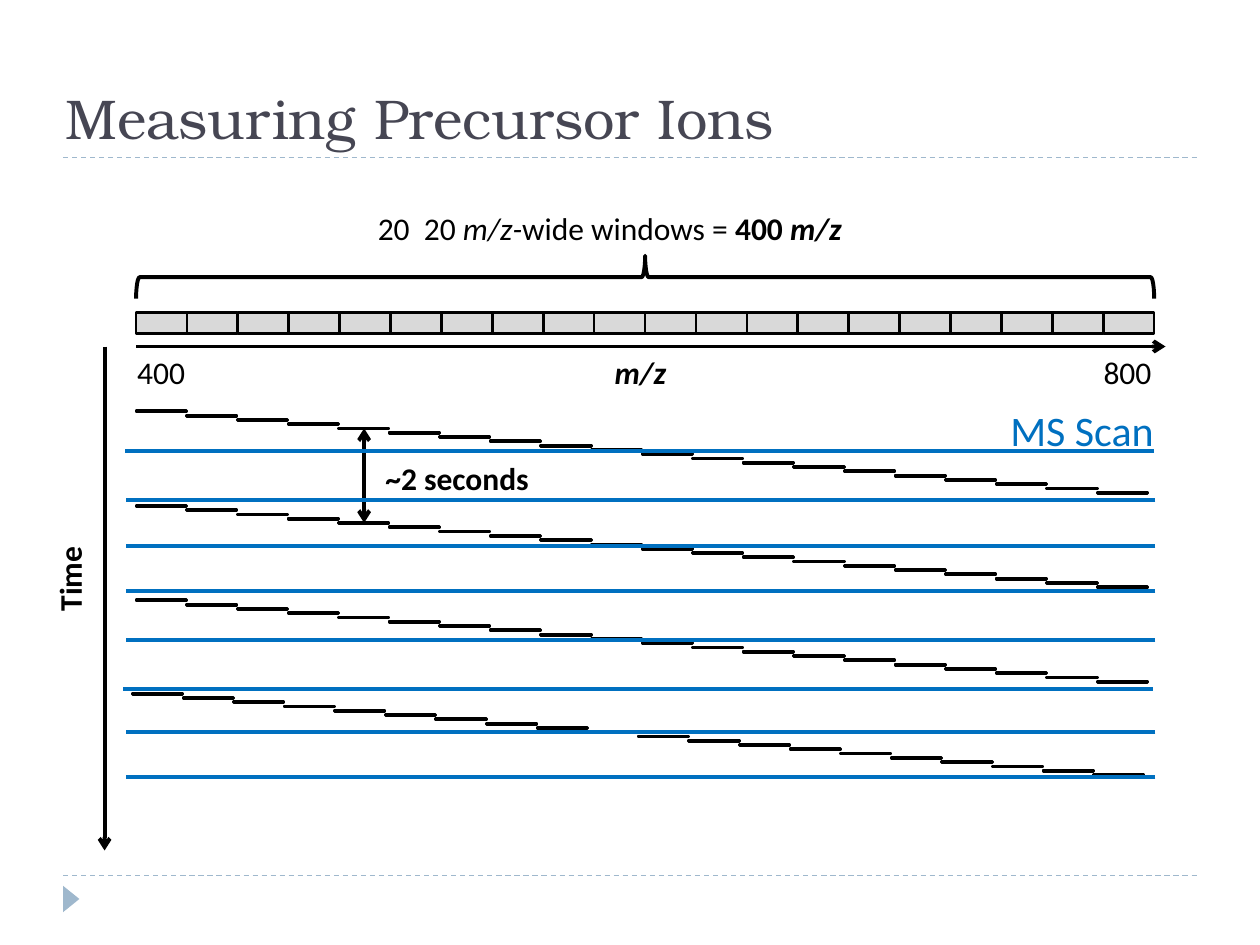
from lxml import etree
from pptx import Presentation
from pptx.dml.color import RGBColor
from pptx.enum.dml import MSO_LINE
from pptx.enum.shapes import MSO_CONNECTOR, MSO_SHAPE
from pptx.enum.text import MSO_ANCHOR, MSO_AUTO_SIZE, PP_ALIGN
from pptx.oxml.ns import qn
from pptx.util import Inches, Pt

RECTANGLE = MSO_SHAPE.RECTANGLE
BRACE = MSO_SHAPE.LEFT_BRACE
TRIANGLE = MSO_SHAPE.ISOSCELES_TRIANGLE
STRAIGHT = MSO_CONNECTOR.STRAIGHT
DASH = MSO_LINE.DASH
LEFT = PP_ALIGN.LEFT
BOTTOM, TOP = MSO_ANCHOR.BOTTOM, MSO_ANCHOR.TOP
GROW, FIXED = MSO_AUTO_SIZE.SHAPE_TO_FIT_TEXT, MSO_AUTO_SIZE.NONE

COLORS = {"ink": "000000", "paper": "FFFFFF", "title": "464653",
          "accent": "9FB8CD", "window": "D9D9D9", "scan": "0070C0"}
BODY_FONT, TITLE_FONT = "Calibri", "TeX Gyre Bonum"

WIDTH, HEIGHT = Inches(10), Inches(7.5)
COLUMN, ROW = WIDTH / 100, HEIGHT / 75  # every length below counts these
WINDOWS = 20
SWEEPS = [(10.8, 32.6), (10.8, 40.1), (10.8, 47.6), (10.5, 55)]
SCANS = [(9.9, 35.8), (10, 39.7), (10, 43.3), (10, 46.9),
         (10, 50.8), (9.8, 54.7), (10, 58.1), (10, 61.7)]
SCAN_WIDTH = 81.7


def color(name):
    return RGBColor.from_string(COLORS[name])


def place(box):
    left, top, width, height = box
    return (round(left * COLUMN), round(top * ROW),
            round(width * COLUMN), round(height * ROW))


def add_shape(parent, kind, box, fill=None, line=None, weight=1.5, rotation=0):
    shape = parent.shapes.add_shape(kind, *place(box))
    shape.shadow.inherit = False
    shape.rotation = rotation
    if fill:
        shape.fill.solid()
        shape.fill.fore_color.rgb = color(fill)
    else:
        shape.fill.background()
    if line:
        shape.line.color.rgb = color(line)
        shape.line.width = Pt(weight)
    else:
        shape.line.fill.background()
    return shape


def add_line(parent, start, end, line="ink", weight=2.25, dash=None, arrows=()):
    """Draw a straight line; arrows names its ends, headEnd before tailEnd."""
    left, top, right, bottom = place((*start, *end))
    connector = parent.shapes.add_connector(STRAIGHT, left, top, right, bottom)
    connector.line.color.rgb = color(line)
    connector.line.width = Pt(weight)
    if dash:
        connector.line.dash_style = dash
    for arrow in arrows:
        etree.SubElement(connector.line._get_or_add_ln(), qn(f"a:{arrow}"), type="arrow")
    etree.SubElement(connector._element.spPr, qn("a:effectLst"))


def write(shape, *runs, size=18, font=BODY_FONT, ink="ink", anchor=TOP,
          wrap=False, fit=GROW):
    """Fill a shape with runs, each a (text, bold, italic) tuple."""
    frame = shape.text_frame
    frame.word_wrap = wrap
    frame.auto_size = fit
    frame.vertical_anchor = anchor
    paragraph = frame.paragraphs[0]
    paragraph.alignment = LEFT
    for text, bold, italic in runs:
        run = paragraph.add_run()
        run.text = text
        run.font.name, run.font.size = font, Pt(size)
        run.font.bold, run.font.italic = bold, italic
        run.font.color.rgb = color(ink)


def add_text(parent, box, *runs, **style):
    shape = parent.shapes.add_textbox(*place(box))
    write(shape, *runs, **style)
    return shape


def add_frame(slide, box):
    """Place the title, the two dashed rules and the corner marker."""
    left, top, width, height = box
    for y in (12.5, 69.5):
        add_line(slide, (left, top + y), (left + width, top + y), "accent", 0.75, DASH)
    add_shape(slide, TRIANGLE, (left - 0.4, top + height - 4.3, 2.1, 1.3),
              fill="accent", rotation=90)
    title = slide.shapes.title
    title.left, title.top, title.width, title.height = place((left - 0.8, top, 91.8, 12.5))
    write(title, ("Measuring Precursor Ions", False, False), size=32, font=TITLE_FONT,
          ink="title", anchor=BOTTOM, wrap=True, fit=FIXED)


def add_brace(slide, box):
    """Place a left brace turned to point up, so that it covers the box."""
    left, top, width, height = box
    upright = (left + (width - height) / 2, top + (height - width) / 2, height, width)
    add_shape(slide, BRACE, upright, line="ink", weight=2.25, rotation=90)
    add_text(slide, (left + 18.2, top - 4.2, 44.4, 4),
             ("20  20 ", False, False), ("m/z-", False, True),
             ("wide windows = ", False, False), ("400 ", True, False),
             ("m/z", True, True), wrap=True)


def add_mass_axis(slide, box):
    left, top, width, height = box
    add_line(slide, (left, top), (left + width, top), arrows=["tailEnd"])
    for text, offset, label_width, strong in (
            ("m/z", 37, 6.8, True), ("400", -0.9, 5.8, False), ("800", 75.8, 5.8, False)):
        add_text(slide, (left + offset, top, label_width, height), (text, strong, strong))


def add_time_axis(slide, box):
    left, top, width, height = box
    right = left + width
    add_line(slide, (right, top), (right, top + height), arrows=["tailEnd"])
    label = add_text(slide, (left, top + 16.1, 7.8, 4), ("Time", True, False))
    label.rotation = 270


def add_windows(slide, box, fill, drop=0):
    """Divide the box into equal windows, each one lower by drop rows."""
    left, top, width, height = box
    group = slide.shapes.add_group_shape()
    step = width / WINDOWS
    for index in range(WINDOWS):
        add_shape(group, RECTANGLE,
                  (left + index * step, top + index * drop, step, height), fill, "ink")


def add_cycle_time(slide, box):
    left, top, width, height = box
    add_line(slide, (left, top), (left, top + height), arrows=["headEnd", "tailEnd"])
    label = add_shape(slide, RECTANGLE, (left + 0.7, top + 1.9, width, 4), fill="paper")
    write(label, ("~2 seconds", True, False))


def add_scans(slide, label_box):
    group = slide.shapes.add_group_shape()
    for left, top in SCANS:
        add_line(group, (left + SCAN_WIDTH, top), (left, top), "scan")
    add_text(group, label_box, ("MS Scan", False, False), size=24, ink="scan")


def main():
    presentation = Presentation()
    presentation.slide_width, presentation.slide_height = WIDTH, HEIGHT
    slide = presentation.slides.add_slide(presentation.slide_layouts[5])
    add_frame(slide, (5, 0, 90, 75))
    add_brace(slide, (10.8, 20.3, 80.8, 3.4))
    add_mass_axis(slide, (10.8, 27.5, 81.7, 4))
    for left, top in SWEEPS:
        add_windows(slide, (left, top, 80.3, 0.1), "paper", drop=0.34)
    add_time_axis(slide, (1.6, 27.5, 6.7, 40))
    add_windows(slide, (10.8, 24.8, 80.8, 1.7), "window")
    add_cycle_time(slide, (28.9, 34, 14.8, 7.5))
    add_scans(slide, (79.2, 31.6, 13.4, 5))
    presentation.save("out.pptx")


if __name__ == "__main__":
    main()
